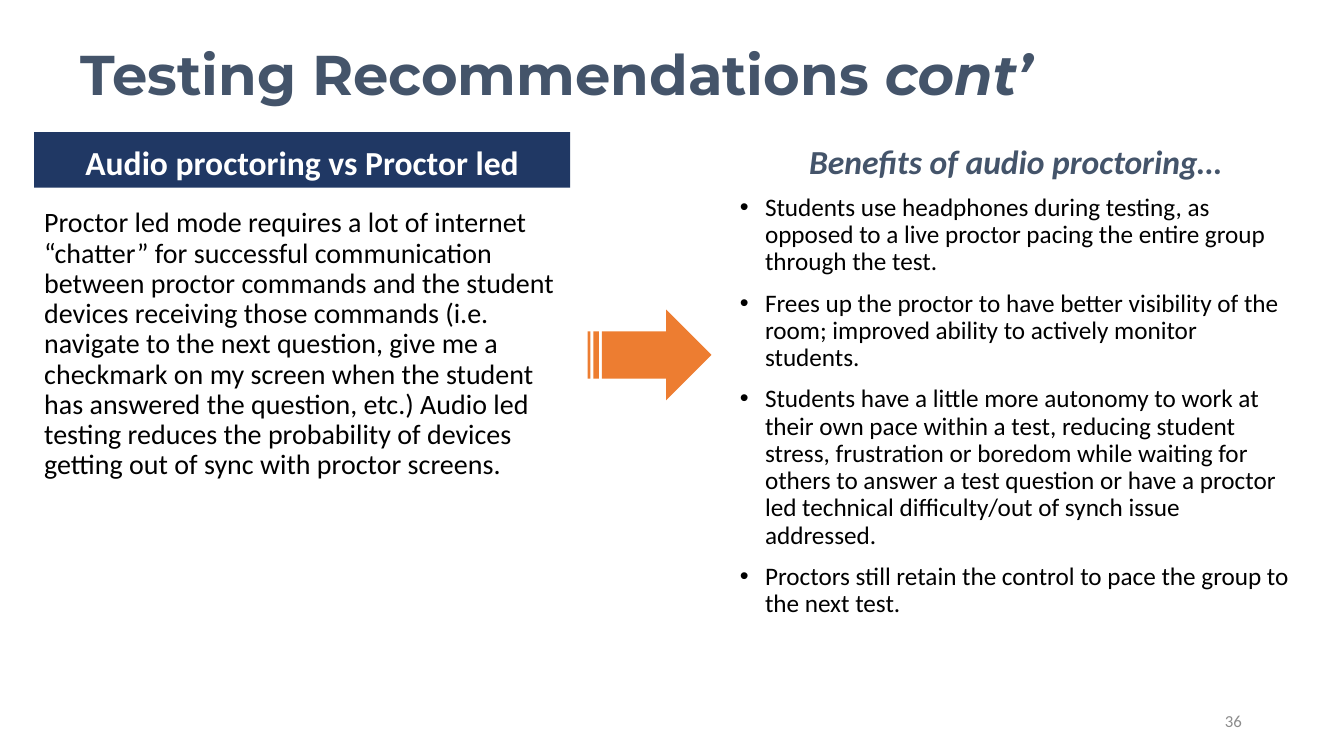
"""Build the slide on audio proctoring and its benefits."""
from lxml.etree import SubElement
from pptx import Presentation
from pptx.dml.color import RGBColor
from pptx.enum.shapes import MSO_SHAPE
from pptx.enum.text import MSO_ANCHOR, MSO_AUTO_SIZE, PP_ALIGN
from pptx.oxml.ns import qn
from pptx.util import Cm, Pt

HUES = {
    "navy": "203864",
    "slate": "44546A",
    "orange": "ED7D31",
    "white": "FFFFFF",
    "black": "000000",
    "gray": "8C8C8C",
}


def place(shape, box, anchor):
    """Move a shape to its box and fix its text frame."""
    shape.left, shape.top, shape.width, shape.height = [Cm(n) for n in box]
    frame = shape.text_frame
    frame.word_wrap = True
    frame.auto_size = MSO_AUTO_SIZE.NONE
    frame.vertical_anchor = anchor
    return frame


def write(par, text, size, hue, bold=False, italic=False, face="Calibri"):
    """Add one formatted run to a paragraph."""
    run = par.add_run()
    run.text = text
    font = run.font
    font.name, font.size = face, Pt(size)
    font.bold, font.italic = bold, italic
    font.color.rgb = RGBColor.from_string(HUES[hue])


deck = Presentation()
deck.slide_width, deck.slide_height = Cm(33.87), Cm(19.05)
slide = deck.slides.add_slide(deck.slide_layouts[4])
title, left_head, left_body, right_head, right_body = list(slide.placeholders)[:5]

par = place(title, (1.78, 0.97, 30.38, 1.96), MSO_ANCHOR.MIDDLE).paragraphs[0]
par.alignment = PP_ALIGN.LEFT
par.line_spacing = 0.9
write(par, "Testing Recommendations ", 40, "slate", True, False, "Montserrat")
write(par, "cont’", 40, "slate", True, True, "Montserrat")

left_head.fill.solid()
left_head.fill.fore_color.rgb = RGBColor.from_string(HUES["navy"])
heads = [
    (left_head, (0.86, 3.33, 13.51, 1.4), "Audio proctoring vs Proctor led", "white", False),
    (right_head, (18.39, 3.4, 14.4, 1.3), "Benefits of audio proctoring…", "slate", True),
]
for head, box, text, hue, italic in heads:
    par = place(head, box, MSO_ANCHOR.BOTTOM).paragraphs[0]
    par.alignment = PP_ALIGN.CENTER
    par.line_spacing, par.space_before = 0.9, Pt(10)
    write(par, text, 24, hue, True, italic)

par = place(left_body, (0.86, 5.13, 13.51, 10.24), MSO_ANCHOR.TOP).paragraphs[0]
par.line_spacing, par.space_before = 0.9, Pt(10)
props = par._p.get_or_add_pPr()
props.set("marL", "0")
props.set("indent", "0")
SubElement(props, qn("a:buNone"))
write(
    par,
    "Proctor led mode requires a lot of internet “chatter” for successful "
    "communication between proctor commands and the student devices receiving "
    "those commands (i.e. navigate to the next question, give me a checkmark on "
    "my screen when the student has answered the question, etc.) Audio led "
    "testing reduces the probability of devices getting out of sync with "
    "proctor screens.",
    20,
    "black",
)

gains = [
    "Students use headphones during testing, as opposed to a live proctor "
    "pacing the entire group through the test.",
    "Frees up the proctor to have better visibility of the room; improved "
    "ability to actively monitor students.",
    "Students have a little more autonomy to work at their own pace within a "
    "test, reducing student stress, frustration or boredom while waiting for "
    "others to answer a test question or have a proctor led technical "
    "difficulty/out of synch issue addressed.",
    "Proctors still retain the control to pace the group to the next test.",
]
frame = place(right_body, (18.39, 4.78, 14.4, 12.17), MSO_ANCHOR.TOP)
for spot, gain in enumerate(gains):
    par = frame.add_paragraph() if spot else frame.paragraphs[0]
    par.line_spacing, par.space_before = 0.9, Pt(10)
    props = par._p.get_or_add_pPr()
    props.set("marL", str(Pt(18)))
    props.set("indent", str(-Pt(18)))
    SubElement(props, qn("a:buFont"), typeface="Arial")
    SubElement(props, qn("a:buChar"), char="•")
    write(par, gain, 18, "black")

arrow = slide.shapes.add_shape(
    MSO_SHAPE.STRIPED_RIGHT_ARROW, Cm(14.81), Cm(7.8), Cm(3.12), Cm(2.29)
)
arrow.adjustments[0], arrow.adjustments[1] = 0.52, 0.5
arrow.shadow.inherit = False
arrow.fill.solid()
arrow.fill.fore_color.rgb = RGBColor.from_string(HUES["orange"])
arrow.line.fill.background()

box = (23.93, 17.65, 7.62, 1.02)
page = slide.shapes.add_textbox(*[Cm(n) for n in box])
par = place(page, box, MSO_ANCHOR.MIDDLE).paragraphs[0]
par.alignment = PP_ALIGN.RIGHT
write(par, "36", 12, "gray")

deck.save("out.pptx")
